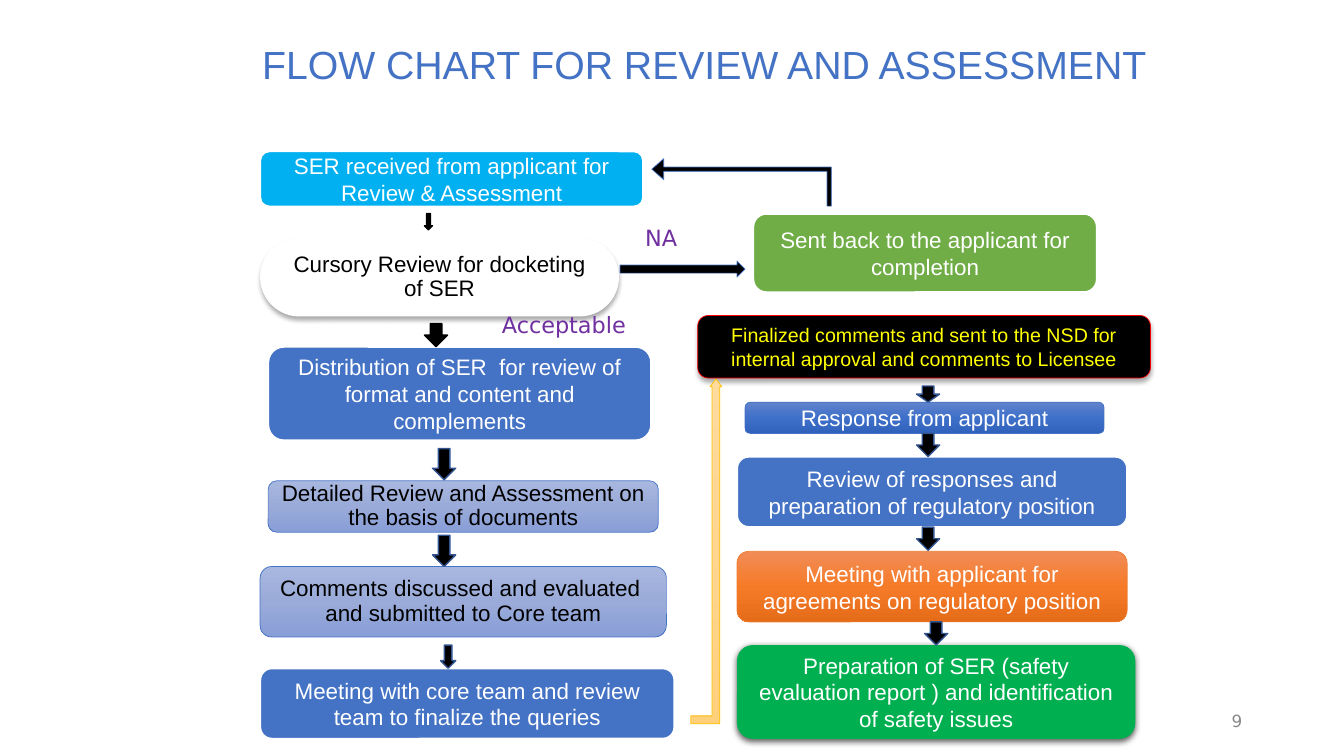
import pptx
import pptx.util
import pptx.dml.color
import pptx.enum.shapes
import pptx.enum.text
import pptx.oxml
import pptx.oxml.ns

RGB = pptx.dml.color.RGBColor
KIND = pptx.enum.shapes.MSO_SHAPE
ALIGN = pptx.enum.text.PP_ALIGN
MID = pptx.enum.text.MSO_ANCHOR.MIDDLE
TOP = pptx.enum.text.MSO_ANCHOR.TOP

WHITE = RGB(0xFF, 0xFF, 0xFF)
BLACK = RGB(0, 0, 0)
BLUE = RGB(0x44, 0x72, 0xC4)
NAVY = RGB(0x32, 0x54, 0x91)
SKY = RGB(0x00, 0xB0, 0xF0)
LEAF = RGB(0x70, 0xAD, 0x47)
GREEN = RGB(0x00, 0xB0, 0x50)
ORANGE = RGB(0xED, 0x7D, 0x31)
GOLD = RGB(0xFF, 0xC0, 0x00)
RED = RGB(0xFF, 0, 0)
YELLOW = RGB(0xFF, 0xFF, 0)
PURPLE = RGB(0x70, 0x30, 0xA0)
GRAY = RGB(0x89, 0x89, 0x89)

PALE = (RGB(0xA8, 0xB7, 0xDF), RGB(0x9A, 0xAB, 0xD9), RGB(0x88, 0x9E, 0xD7))
DEEP = (RGB(0x61, 0x83, 0xCB), RGB(0x3E, 0x70, 0xCA), RGB(0x30, 0x62, 0xBB))
WARM = (RGB(0xF1, 0x8C, 0x57), RGB(0xF6, 0x7B, 0x28), RGB(0xE5, 0x6C, 0x19))
SAND = (RGB(0xFF, 0xDB, 0x9E), RGB(0xFF, 0xD5, 0x90), RGB(0xFF, 0xD0, 0x7C))

EDGE = (WHITE, 1.5)
THIN = (BLUE, 0.5)
SOFT = (32, 3.5, 2.2)
HARD = (63, 4.5, 1.5)


def size(*inches):
    return [pptx.util.Cm(2.54 * n) for n in inches]


class Flow:
    font = "Arial"
    note = "DejaVu Sans"

    def __init__(self, deck):
        self.slide = deck.slides.add_slide(deck.slide_layouts[5])

    def put(self, frame, text, points, color, font, align, space=1.0, anchor=MID):
        frame.word_wrap = True
        frame.vertical_anchor = anchor
        para = frame.paragraphs[0]
        para.alignment = align
        para.line_spacing = space
        run = para.add_run()
        run.text = text
        run.font.size = pptx.util.Pt(points)
        run.font.name = font
        run.font.color.rgb = color

    def title(self, text, box):
        head = self.slide.shapes.title
        head.left, head.top, head.width, head.height = size(*box)
        head.text_frame.auto_size = pptx.enum.text.MSO_AUTO_SIZE.NONE
        self.put(head.text_frame, text, 28, BLUE, self.font, ALIGN.LEFT, 0.9)

    def label(self, text, box, points, color, align=ALIGN.LEFT, anchor=TOP):
        area = self.slide.shapes.add_textbox(*size(*box))
        self.put(area.text_frame, text, points, color, self.note, align, anchor=anchor)

    def shape(self, kind, box, fill, line=None, adjust=()):
        item = self.slide.shapes.add_shape(kind, *size(*box))
        item.shadow.inherit = False
        for i, part in enumerate(adjust):
            item.adjustments[i] = part
        if isinstance(fill, RGB):
            item.fill.solid()
            item.fill.fore_color.rgb = fill
        else:
            self.blend(item, fill)
        if line:
            item.line.color.rgb = line[0]
            item.line.width = pptx.util.Pt(line[1])
        else:
            item.line.fill.background()
        return item

    def blend(self, item, tones):
        item.fill.gradient()
        item.fill.gradient_angle = 270
        stops = item._element.spPr.find(".//" + pptx.oxml.ns.qn("a:gsLst"))
        for stop in list(stops):
            stops.remove(stop)
        for i, tone in enumerate(tones):
            stops.append(pptx.oxml.parse_xml(
                f'<a:gs {pptx.oxml.ns.nsdecls("a")} pos="{i * 50000}">'
                f'<a:srgbClr val="{tone}"/></a:gs>'))

    def shade(self, item, alpha, blur, drop):
        effects = item._element.spPr.find(pptx.oxml.ns.qn("a:effectLst"))
        effects.append(pptx.oxml.parse_xml(
            f'<a:outerShdw {pptx.oxml.ns.nsdecls("a")} blurRad="{pptx.util.Pt(blur)}" '
            f'dist="{pptx.util.Pt(drop)}" dir="5400000" algn="ctr" rotWithShape="0">'
            f'<a:srgbClr val="000000"><a:alpha val="{alpha * 1000}"/></a:srgbClr>'
            f'</a:outerShdw>'))

    def step(self, text, box, fill, line=EDGE, color=WHITE, points=16, space=1.0,
             shadow=None, kind=KIND.ROUNDED_RECTANGLE, adjust=()):
        item = self.shape(kind, box, fill, line, adjust)
        if shadow:
            self.shade(item, *shadow)
        self.put(item.text_frame, text, points, color, self.font, ALIGN.CENTER, space)

    def down(self, box, color=NAVY):
        self.shape(KIND.DOWN_ARROW, box, BLACK, (color, 1), (0.5, 0.5))


def main():
    deck = pptx.Presentation()
    deck.slide_width, deck.slide_height = size(13.33, 7.5)
    flow = Flow(deck)
    flow.title("FLOW CHART FOR REVIEW AND ASSESSMENT", (2.5, 0.04, 9, 1.25))
    flow.label("9", (9.42, 6.95, 3, 0.4), 12, GRAY, ALIGN.RIGHT, MID)

    flow.step("SER received from applicant for Review & Assessment",
              (2.58, 1.5, 3.8, 0.55), SKY)
    flow.step("Cursory Review for docketing of SER", (2.58, 2.36, 3.56, 0.78), WHITE,
              None, BLACK, space=0.9, shadow=SOFT,
              kind=KIND.ROUND_2_DIAG_RECTANGLE, adjust=(0.5, 0.5))
    flow.step("Distribution of SER  for review of format and content and complements",
              (2.66, 3.44, 3.8, 0.93), BLUE)
    flow.step("Detailed Review and Assessment on the basis of documents",
              (2.66, 4.77, 3.87, 0.51), PALE, THIN, BLACK, space=0.9)
    flow.step("Comments discussed and evaluated  and submitted to Core team",
              (2.58, 5.62, 4.03, 0.7), PALE, THIN, BLACK, space=0.9)
    flow.step("Meeting with core team and review team to finalize the queries",
              (2.58, 6.63, 4.11, 0.7), BLUE)

    flow.step("Sent back to the applicant for completion", (7.47, 2.12, 3.41, 0.78), LEAF)
    flow.step("Finalized comments and sent to the NSD for internal approval "
              "and comments to Licensee", (6.92, 3.13, 4.49, 0.62), BLACK,
              (RED, 0.5), YELLOW, 14, shadow=SOFT)
    flow.step("Response from applicant", (7.39, 3.99, 3.56, 0.31), DEEP, THIN)
    flow.step("Review of responses and preparation of regulatory position",
              (7.31, 4.53, 3.87, 0.7), BLUE)
    flow.step("Meeting with applicant for agreements on regulatory position",
              (7.31, 5.47, 3.87, 0.7), WARM, (ORANGE, 0.5))
    flow.step("Preparation of SER (safety evaluation report ) and identification "
              "of safety issues", (7.31, 6.4, 3.95, 0.93), GREEN, None, shadow=HARD)

    flow.down((4.21, 2.12, 0.08, 0.16), BLACK)
    flow.down((4.21, 3.21, 0.23, 0.23), BLACK)
    for top in (4.45, 5.31):
        flow.down((4.29, top, 0.23, 0.31))
    flow.down((4.37, 6.4, 0.15, 0.23))
    flow.down((9.09, 3.83, 0.23, 0.16))
    for left, top in ((9.09, 4.3), (9.09, 5.23), (9.17, 6.17)):
        flow.down((left, top, 0.23, 0.23))

    flow.shape(KIND.RIGHT_ARROW, (6.15, 2.59, 1.24, 0.16), BLACK, THIN)
    back = flow.shape(KIND.BENT_UP_ARROW, (7.12, 0.92, 0.47, 1.78), BLACK, THIN,
                      (0.09, 0.22, 0.25))
    back.rotation = 270
    flow.shape(KIND.BENT_UP_ARROW, (6.85, 3.76, 0.31, 3.42), SAND, (GOLD, 0.5),
               (0.25, 0.19, 0.25))

    flow.label("NA", (6.3, 2.17, 0.62, 0.37), 16, PURPLE)
    flow.label("Acceptable", (4.88, 3.04, 1.7, 0.38), 16, PURPLE)
    deck.save("out.pptx")


if __name__ == "__main__":
    main()
